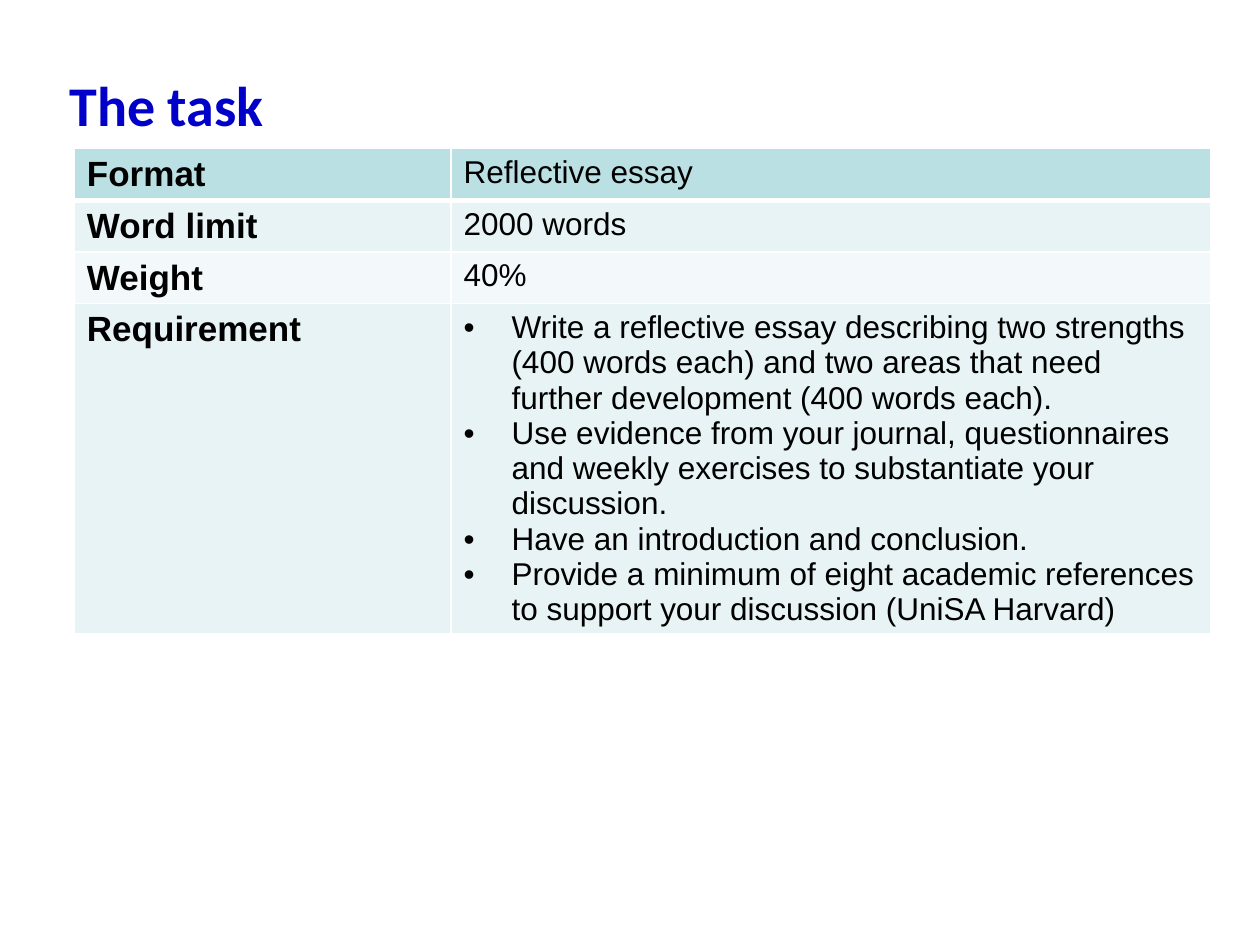
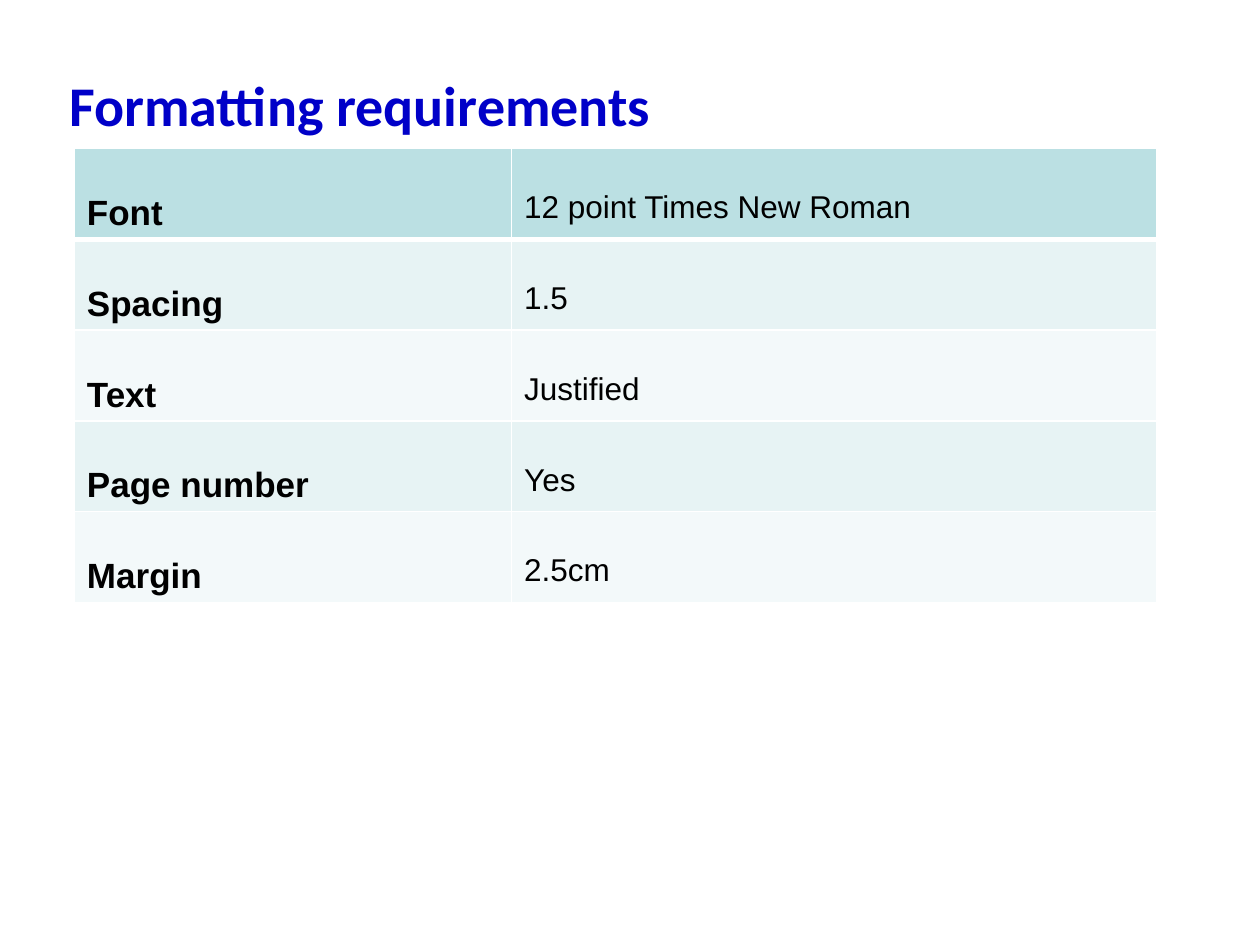
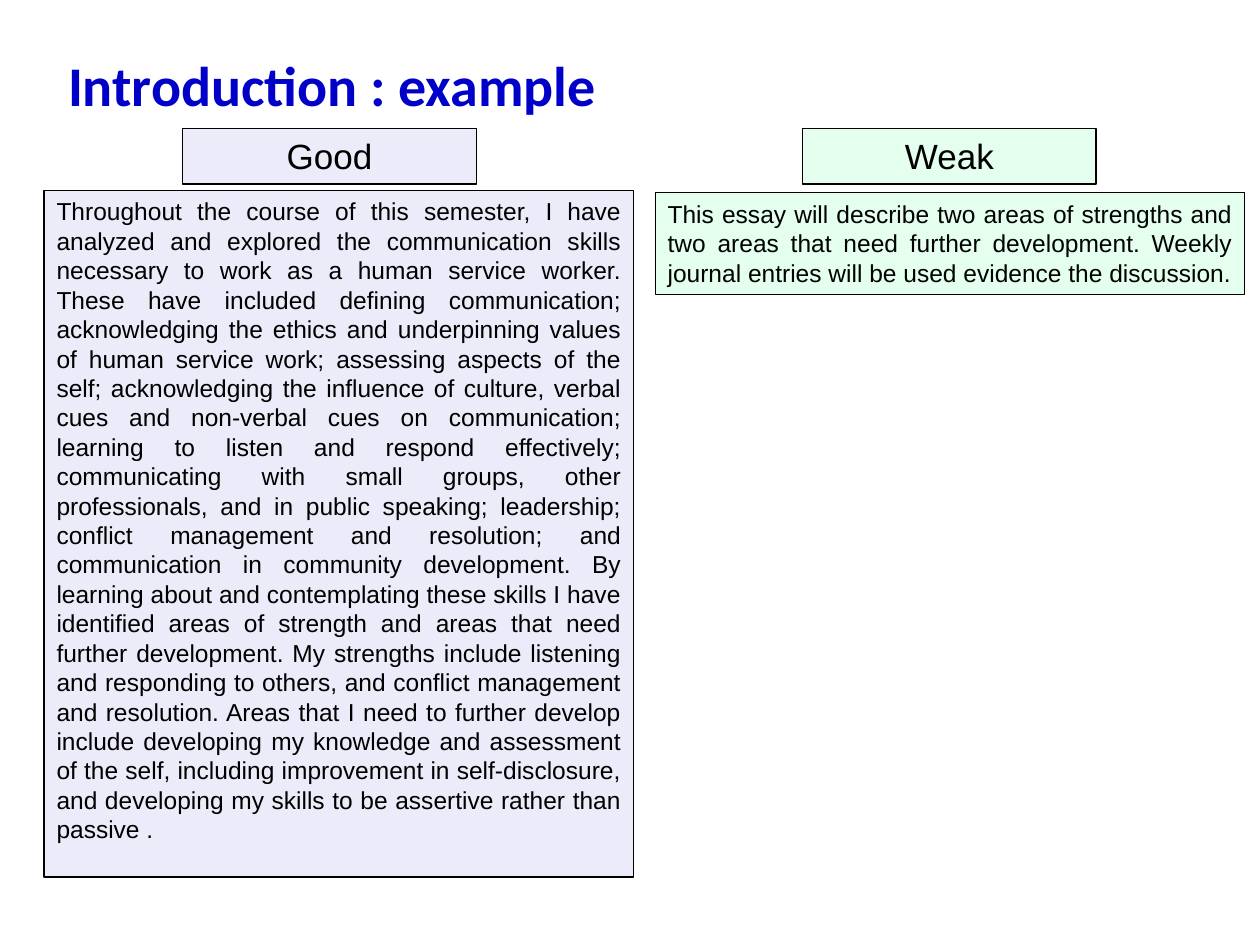
from dataclasses import dataclass

from lxml.etree import SubElement
from pptx import Presentation
from pptx.dml.color import RGBColor
from pptx.enum.shapes import MSO_SHAPE
from pptx.enum.text import MSO_ANCHOR, MSO_AUTO_SIZE, PP_ALIGN
from pptx.oxml.ns import qn
from pptx.util import Inches, Pt


@dataclass(frozen=True)
class Theme:
    title_font: str = "Calibri"
    body_font: str = "Arial"
    title_size: int = 32
    label_size: int = 20
    value_size: int = 18
    passage_size: int = 14
    title_color: str = "0000C8"
    text_color: str = "000000"
    border_color: str = "FFFFFF"
    header_fill: str = "BBE0E3"
    band_fills: tuple = ("E7F3F4", "F3F9FA")
    good_fill: str = "EBEBF9"
    weak_fill: str = "E5FFEF"


THEME = Theme()
TITLE_ONLY_LAYOUT = 5

TASK_ROWS = [
    ("Format", "Reflective essay"),
    ("Word limit", "2000 words"),
    ("Weight", "40%"),
    ("Requirement", [
        "Write a reflective essay describing two strengths (400 words each) and two areas that need "
        "further development (400 words each).",
        "Use evidence from your journal, questionnaires and weekly exercises to substantiate your discussion.",
        "Have an introduction and conclusion.",
        "Provide a minimum of eight academic references to support your discussion (UniSA Harvard)",
    ]),
]

FORMATTING_ROWS = [
    ("Font", "12 point Times New Roman"),
    ("Spacing", "1.5"),
    ("Text", "Justified"),
    ("Page number", "Yes"),
    ("Margin", "2.5cm"),
]

GOOD_SENTENCES = [
    "Throughout the course of this semester, I have analyzed and explored the communication skills "
    "necessary to work as a human service worker.",
    "These have included defining communication; acknowledging the ethics and underpinning values of "
    "human service work; assessing aspects of the self; acknowledging the influence of culture, verbal "
    "cues and non-verbal cues on communication; learning to listen and respond effectively; "
    "communicating with small groups, other professionals, and in public speaking; leadership; conflict "
    "management and resolution; and communication in community development.",
    "By learning about and contemplating these skills I have identified areas of strength and areas "
    "that need further development.",
    "My strengths include listening and responding to others, and conflict management and resolution.",
    "Areas that I need to further develop include developing my knowledge and assessment of the self, "
    "including improvement in self-disclosure, and developing my skills to be assertive rather than "
    "passive .",
]
WEAK_SENTENCES = [
    "This essay will describe two areas of strengths and two areas that need further development.",
    "Weekly journal entries will be used evidence the discussion.",
]


def color(value):
    return RGBColor.from_string(value)


def style_font(font, name, size, font_color, bold=False):
    font.name = name
    font.size = Pt(size)
    font.bold = bold
    font.color.rgb = color(font_color)


def add_titled_slide(presentation, text, left=0.45, top=0.47):
    slide = presentation.slides.add_slide(presentation.slide_layouts[TITLE_ONLY_LAYOUT])
    title = slide.shapes.title
    title.left, title.top, title.width, title.height = map(Inches, (left, top, 9.03, 0.71))
    title.text = text
    title.text_frame.auto_size = MSO_AUTO_SIZE.NONE
    title.text_frame.vertical_anchor = MSO_ANCHOR.MIDDLE
    paragraph = title.text_frame.paragraphs[0]
    paragraph.alignment = PP_ALIGN.LEFT
    style_font(paragraph.font, THEME.title_font, THEME.title_size, THEME.title_color, bold=True)
    return slide


def set_borders(cell, top, bottom):
    properties = cell._tc.get_or_add_tcPr()
    for side, points in (("L", 1), ("R", 1), ("T", top), ("B", bottom)):
        line = SubElement(properties, qn(f"a:ln{side}"), w=str(Pt(points)))
        fill = SubElement(line, qn("a:solidFill"))
        SubElement(fill, qn("a:srgbClr"), val=THEME.border_color)


def add_bullet(paragraph):
    properties = paragraph._p.get_or_add_pPr()
    properties.set("marL", str(Inches(0.38)))
    properties.set("indent", str(Inches(-0.38)))
    SubElement(properties, qn("a:buFont"), typeface=THEME.body_font)
    SubElement(properties, qn("a:buChar"), char="•")


def fill_cell(cell, content, size, bold, line_spacing):
    bulleted = isinstance(content, list)
    cell.text = "\n".join(content) if bulleted else content
    for paragraph in cell.text_frame.paragraphs:
        paragraph.line_spacing = line_spacing
        if bulleted:
            add_bullet(paragraph)
        style_font(paragraph.font, THEME.body_font, size, THEME.text_color, bold)


def add_detail_table(slide, rows, column_widths, row_heights, line_spacing=1.0):
    frame = slide.shapes.add_table(
        len(rows), 2, Inches(0.59), Inches(1.18),
        Inches(sum(column_widths)), Inches(sum(row_heights)))
    table = frame.table
    table.first_row = False
    table.horz_banding = False
    for column, width in zip(table.columns, column_widths):
        column.width = Inches(width)
    for index, (label, value) in enumerate(rows):
        table.rows[index].height = Inches(row_heights[index])
        row_fill = THEME.band_fills[(index - 1) % 2] if index else THEME.header_fill
        label_cell, value_cell = table.rows[index].cells
        for cell in (label_cell, value_cell):
            set_borders(cell, top=3 if index == 1 else 1, bottom=3 if index == 0 else 1)
            cell.fill.solid()
            cell.fill.fore_color.rgb = color(row_fill)
        fill_cell(label_cell, label, THEME.label_size, True, line_spacing)
        fill_cell(value_cell, value, THEME.value_size, False, line_spacing)


def add_panel(slide, text, bounds, fill, size, alignment):
    panel = slide.shapes.add_shape(MSO_SHAPE.RECTANGLE, *map(Inches, bounds))
    panel.shadow.inherit = False
    panel.fill.solid()
    panel.fill.fore_color.rgb = color(fill)
    panel.line.color.rgb = color(THEME.text_color)
    panel.line.width = Pt(0.75)
    frame = panel.text_frame
    frame.word_wrap = True
    frame.vertical_anchor = MSO_ANCHOR.TOP
    frame.text = text
    paragraph = frame.paragraphs[0]
    paragraph.alignment = alignment
    style_font(paragraph.font, THEME.body_font, size, THEME.text_color)


def add_example(slide, heading, heading_left, sentences, passage_bounds, fill):
    add_panel(slide, " ".join(sentences), passage_bounds, fill, THEME.passage_size, PP_ALIGN.JUSTIFY)
    add_panel(slide, heading, (heading_left, 1.02, 2.33, 0.44), fill, THEME.label_size, PP_ALIGN.CENTER)


def main():
    presentation = Presentation()
    presentation.slide_width = Inches(10)
    presentation.slide_height = Inches(7.5)

    task = add_titled_slide(presentation, "The task")
    add_detail_table(task, TASK_ROWS, (2.99, 6.03), [0.41] * 3 + [2.62])

    formatting = add_titled_slide(presentation, "Formatting requirements")
    add_detail_table(formatting, FORMATTING_ROWS, (3.47, 5.12), [0.72] * 5, line_spacing=2.0)

    introduction = add_titled_slide(presentation, "Introduction : example", left=0.44, top=0.31)
    add_example(introduction, "Good", 1.45, GOOD_SENTENCES, (0.35, 1.51, 4.68, 5.45), THEME.good_fill)
    add_example(introduction, "Weak", 6.37, WEAK_SENTENCES, (5.2, 1.53, 4.68, 0.81), THEME.weak_fill)

    presentation.save("out.pptx")


if __name__ == "__main__":
    main()
